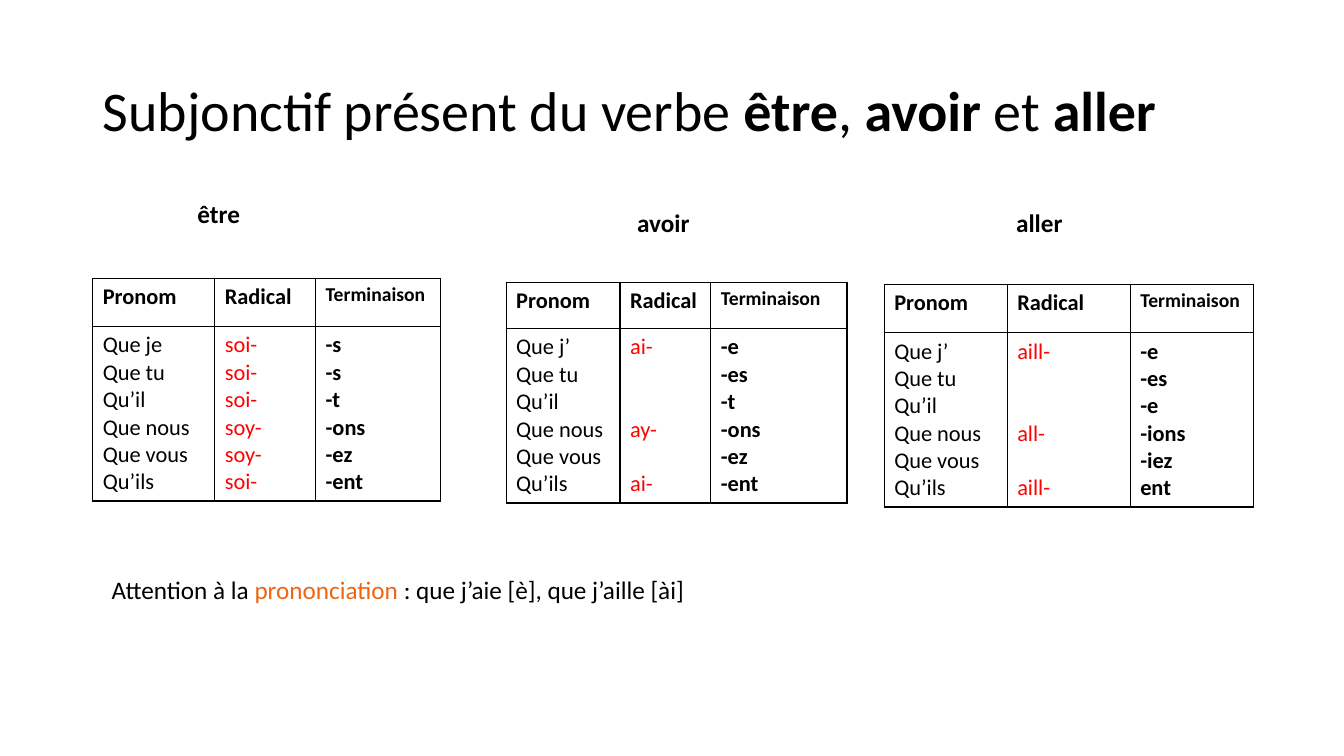
"""Build a slide with the French present subjunctive of être, avoir and aller."""
from lxml.etree import SubElement
from pptx import Presentation
from pptx.dml.color import RGBColor
from pptx.enum.text import MSO_ANCHOR as Anchor
from pptx.oxml.ns import qn
from pptx.util import Inches, Pt

BLACK = RGBColor(0x00, 0x00, 0x00)
WHITE = RGBColor(0xFF, 0xFF, 0xFF)
RED = RGBColor(0xFF, 0x00, 0x00)
ORANGE = RGBColor(0xEE, 0x66, 0x12)
FONT = "Calibri"
LINE_HEIGHT = 19.53
BODY_HEIGHT = 1.73

HEADERS = [("Pronom", 16), ("Radical", 16), ("Terminaison", 14)]
PRONOUNS = ["Que tu", "Qu’il", "Que nous", "Que vous", "Qu’ils"]

VERBS = [
    {"verb": "être", "label": (1.86, 1.92, 0.63), "table": (0.92, 2.76),
     "columns": [1.21, 1, 1.24], "header_height": 0.48, "first": "Que je",
     "stems": ["soi-", "soi-", "soi-", "soy-", "soy-", "soi-"],
     "endings": ["-s", "-s", "-t", "-ons", "-ez", "-ent"]},
    {"verb": "avoir", "label": (6.22, 2.01, 0.73), "table": (5.02, 2.8),
     "columns": [1.13, 0.9, 1.35], "header_height": 0.46, "first": "Que j’",
     "stems": ["ai-", None, None, "ay-", None, "ai-"],
     "endings": ["-e", "-es", "-t", "-ons", "-ez", "-ent"]},
    {"verb": "aller", "label": (9.98, 2.01, 0.66), "table": (8.77, 2.82),
     "columns": [1.22, 1.22, 1.22], "header_height": 0.48, "first": "Que j’",
     "stems": ["aill-", None, None, "all-", None, "aill-"],
     "endings": ["-e", "-es", "-e", "-ions", "-iez", "ent"]},
]


def style_font(font, size, color=BLACK, bold=False):
    """Apply typeface, size, colour and weight to a font."""
    font.name = FONT
    font.size = Pt(size)
    font.bold = bold
    font.color.rgb = color


def add_text(page, place, spans, size, wrap=False):
    """Add a one-paragraph text box from (text, colour, bold) spans."""
    box = page.shapes.add_textbox(*[Inches(length) for length in place])
    box.text_frame.word_wrap = wrap
    para = box.text_frame.paragraphs[0]
    if len(spans) == 1:
        text, color, bold = spans[0]
        para.text = text
        style_font(para.font, size, color, bold)
        return box
    for text, color, bold in spans:
        span = para.add_run()
        span.text = text
        style_font(span.font, size, color, bold)
    return box


def frame_cell(cell):
    """Give a cell black borders and a white fill."""
    properties = cell._tc.get_or_add_tcPr()
    for side in ("lnL", "lnR", "lnT", "lnB"):
        line = SubElement(properties, qn(f"a:{side}"), w=str(Pt(1)))
        fill = SubElement(line, qn("a:solidFill"))
        SubElement(fill, qn("a:srgbClr"), val=str(BLACK))
    cell.fill.solid()
    cell.fill.fore_color.rgb = WHITE


def fill_cell(cell, lines, size=16, color=BLACK, bold=False):
    """Write lines into a cell, turning each None into space before the next."""
    frame_cell(cell)
    para, skipped = None, 0
    for line in lines:
        if line is None:
            skipped += 1
            continue
        frame = cell.text_frame
        para = frame.add_paragraph() if para else frame.paragraphs[0]
        para.text = line
        style_font(para.font, size, color, bold)
        if skipped:
            para.space_before = Pt(skipped * LINE_HEIGHT)
        skipped = 0


def add_verb(page, verb):
    """Add the label and conjugation table of one verb."""
    add_text(page, (*verb["label"], 0.4), [(verb["verb"], BLACK, True)], 18)
    left, top = verb["table"]
    heights = [verb["header_height"], BODY_HEIGHT]
    table = page.shapes.add_table(
        2, 3, Inches(left), Inches(top),
        Inches(sum(verb["columns"])), Inches(sum(heights))).table
    table.first_row = False
    table.horz_banding = False
    for column, width in zip(table.columns, verb["columns"]):
        column.width = Inches(width)
    for row, height in zip(table.rows, heights):
        row.height = Inches(height)
    for index, (header, size) in enumerate(HEADERS):
        fill_cell(table.cell(0, index), [header], size, bold=True)
    fill_cell(table.cell(1, 0), [verb["first"], *PRONOUNS])
    fill_cell(table.cell(1, 1), verb["stems"], color=RED)
    fill_cell(table.cell(1, 2), verb["endings"], bold=True)


def main():
    """Build and save the deck."""
    deck = Presentation()
    deck.slide_width, deck.slide_height = Inches(13.33), Inches(7.5)
    page = deck.slides.add_slide(deck.slide_layouts[6])

    title = add_text(page, (0.92, 0.4, 11.5, 1.45), [
        ("Subjonctif présent du verbe ", BLACK, False), ("être", BLACK, True),
        (", ", BLACK, False), ("avoir", BLACK, True),
        (" et ", BLACK, False), ("aller", BLACK, True)], 40, wrap=True)
    title.text_frame.vertical_anchor = Anchor.MIDDLE
    title.text_frame.paragraphs[0].line_spacing = 0.9

    for verb in VERBS:
        add_verb(page, verb)

    add_text(page, (1.01, 5.65, 5.96, 0.4), [
        ("Attention à la ", BLACK, False), ("prononciation", ORANGE, False),
        (" : que j’aie [è], que j’aille [ài]", BLACK, False)], 18)
    deck.save("out.pptx")


if __name__ == "__main__":
    main()
